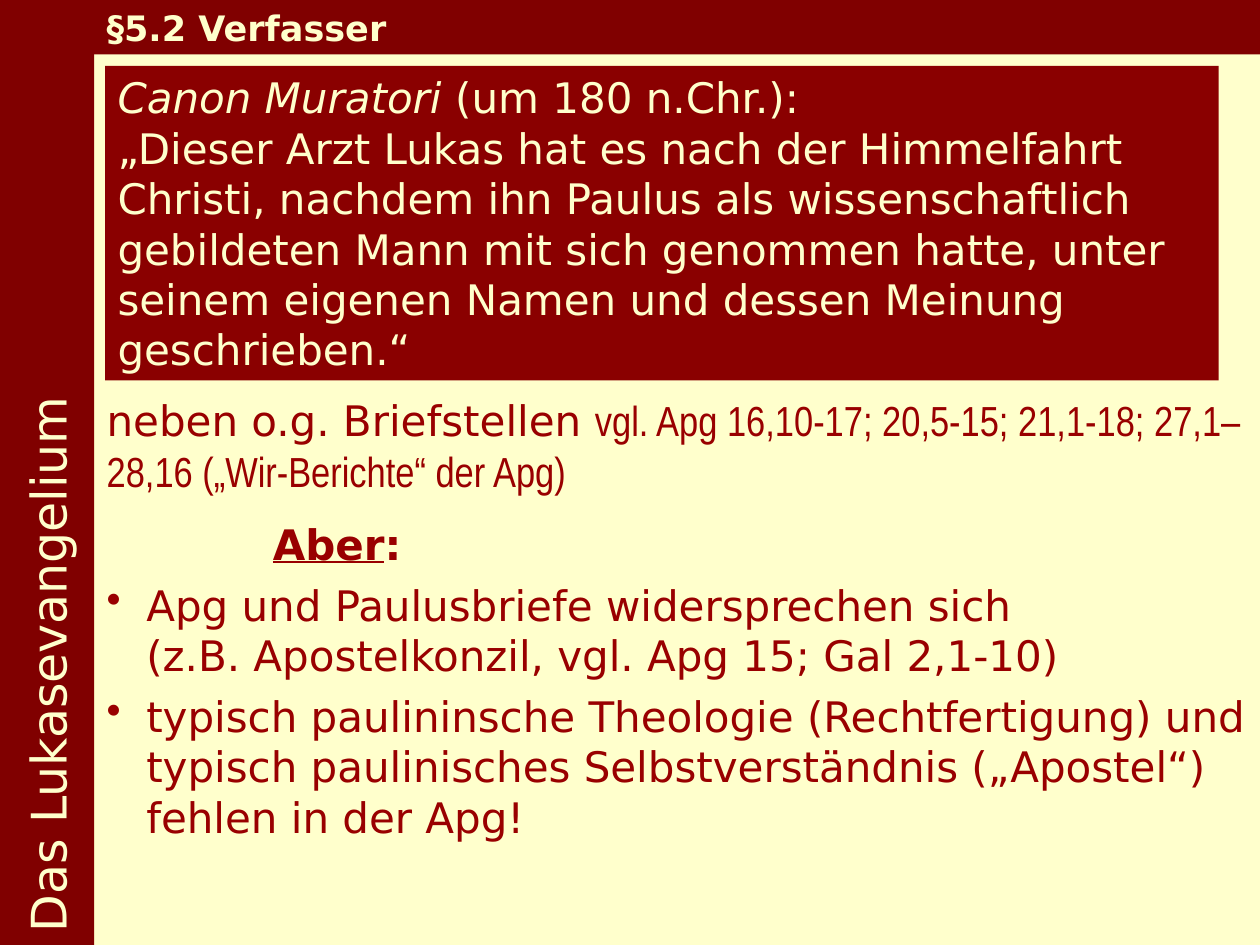
from lxml import etree
from pptx import Presentation
from pptx import util as u
from pptx.dml import color
from pptx.enum import shapes, text
from pptx.oxml import ns

HUES = {"page": "FFFFCC", "bar": "800000", "quote": "8A0000", "ink": "990000"}
FACE = "DejaVu Sans"
MID = text.MSO_ANCHOR.MIDDLE


def tint(name):
    return color.RGBColor.from_string(HUES[name])


def panel(slide, box, hue=None, anchor=MID):
    area = [u.Cm(side) for side in box]
    if hue:
        shape = slide.shapes.add_shape(shapes.MSO_SHAPE.RECTANGLE, *area)
        shape.shadow.inherit = False
        shape.fill.solid()
        shape.fill.fore_color.rgb = tint(hue)
        shape.line.fill.background()
    else:
        shape = slide.shapes.add_textbox(*area)
    frame = shape.text_frame
    frame.word_wrap = True
    frame.vertical_anchor = anchor
    return frame


def style(para, hue, size=24, bold=False):
    para.alignment = text.PP_ALIGN.LEFT
    font = para.font
    font.name, font.size, font.bold = FACE, u.Pt(size), bold
    font.color.rgb = tint(hue)


def indent(para, left, first=0, mark=None):
    props = para._p.get_or_add_pPr()
    props.set("marL", str(u.Cm(left)))
    props.set("indent", str(u.Cm(first)))
    if mark:
        bullet = etree.Element(ns.qn("a:buChar"), char=mark)
        props.find(ns.qn("a:defRPr")).addprevious(bullet)


def side(slide, box):
    frame = panel(slide, box, "bar")
    frame._txBody.bodyPr.set("vert", "vert270")
    para = frame.paragraphs[0]
    para.text = "Das Lukasevangelium"
    style(para, "page", 28)


def head(slide, box):
    para = panel(slide, box, "bar", text.MSO_ANCHOR.TOP).paragraphs[0]
    para.text = "§5.2 Verfasser"
    style(para, "page", 20, True)


def quote(slide, box):
    frame = panel(slide, box, "quote")
    title = frame.paragraphs[0]
    work = title.add_run()
    work.text = "Canon Muratori "
    work.font.italic = True
    title.add_run().text = "(um 180 n.Chr.):"
    body = frame.add_paragraph()
    body.text = (
        "„Dieser Arzt Lukas hat es nach der Himmelfahrt Christi, "
        "nachdem ihn Paulus als wissenschaftlich gebildeten Mann mit sich "
        "genommen hatte, unter seinem eigenen Namen und dessen Meinung "
        "geschrieben.“"
    )
    for para in frame.paragraphs:
        style(para, "page")


def verses(slide, box):
    para = panel(slide, box).paragraphs[0]
    style(para, "ink")
    para.add_run().text = "neben o.g. Briefstellen "
    refs = para.add_run()
    refs.text = ("vgl. Apg 16,10-17; 20,5-15; 21,1-18; 27,1–28,16 "
                 "(„Wir-Berichte“ der Apg)")
    refs.font.name = "Arial Narrow"


def doubts(slide, box):
    frame = panel(slide, box)
    lead = frame.paragraphs[0]
    style(lead, "ink", bold=True)
    lead.space_before = u.Pt(6)
    indent(lead, 3.35)
    word = lead.add_run()
    word.text = "Aber"
    word.font.underline = True
    lead.add_run().text = ":"
    points = [
        "Apg und Paulusbriefe widersprechen sich\v"
        "(z.B. Apostelkonzil, vgl. Apg 15; Gal 2,1-10)",
        "typisch paulininsche Theologie (Rechtfertigung) und typisch "
        "paulinisches Selbstverständnis („Apostel“) fehlen in der Apg!",
    ]
    for point in points:
        para = frame.add_paragraph()
        para.text = point
        style(para, "ink")
        para.space_before = u.Pt(6)
        indent(para, 0.8, -0.8, "•")


def main():
    deck = Presentation()
    wide, high = 25.4, 19.05
    deck.slide_width, deck.slide_height = u.Cm(wide), u.Cm(high)
    slide = deck.slides.add_slide(deck.slide_layouts[6])
    slide.background.fill.solid()
    slide.background.fill.fore_color.rgb = tint("page")
    left = 1.9
    span = wide - left
    quote(slide, (2.12, 1.33, 22.45, 6.34))
    verses(slide, (left, 7.83, span, 2.29))
    doubts(slide, (left, 10.28, span, 6.86))
    side(slide, (0, 0, left, high))
    head(slide, (left, 0, span, 1.1))
    deck.save("out.pptx")


if __name__ == "__main__":
    main()
